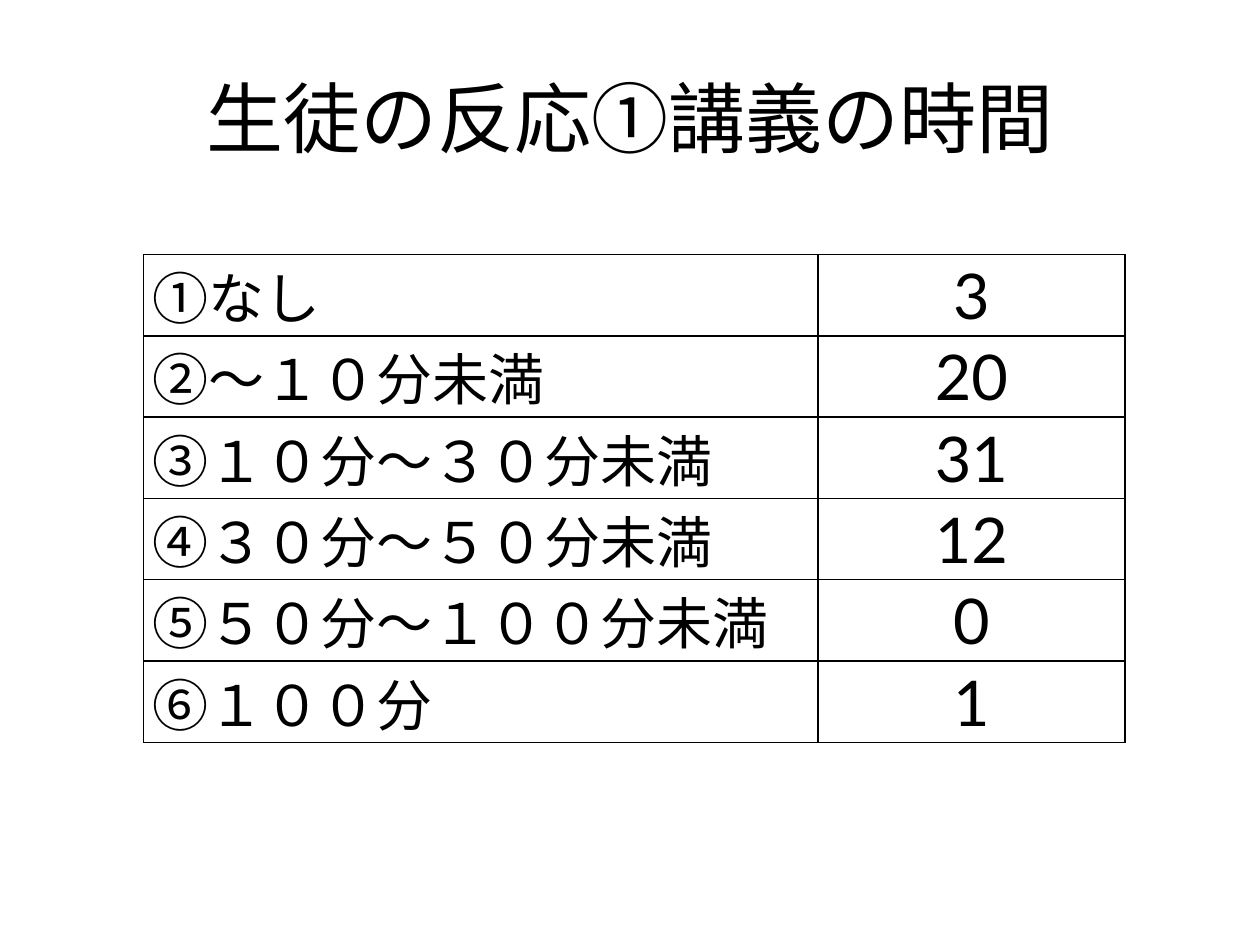
from lxml import etree
from pptx import Presentation
from pptx.dml.color import RGBColor
from pptx.enum.text import MSO_ANCHOR, PP_ALIGN
from pptx.oxml.ns import qn
from pptx.util import Inches, Pt

LEFT, CENTER = PP_ALIGN.LEFT, PP_ALIGN.CENTER
MIDDLE = MSO_ANCHOR.MIDDLE
FONT = "Lato"
BLACK = "000000"
TITLE_ONLY = 5

RESPONSES = [
    ("①なし", "3"),
    ("②〜１０分未満", "20"),
    ("③１０分〜３０分未満", "31"),
    ("④３０分〜５０分未満", "12"),
    ("⑤５０分〜１００分未満", "0"),
    ("⑥１００分", "1"),
]
COLUMN_WIDTHS = (5.35, 2.44)
ROW_HEIGHT = 0.64


def color(hex_value):
    return RGBColor.from_string(hex_value)


def write_text(frame, text, size, align):
    frame.vertical_anchor = MIDDLE
    paragraph = frame.paragraphs[0]
    paragraph.alignment = align
    run = paragraph.add_run()
    run.text = text
    run.font.size = Pt(size)
    run.font.name = FONT
    run.font.color.rgb = color(BLACK)


def add_borders(cell, hex_value, width):
    properties = cell._tc.get_or_add_tcPr()
    for position, side in enumerate(("a:lnL", "a:lnR", "a:lnT", "a:lnB")):
        line = etree.Element(qn(side), w=str(Pt(width)))
        fill = etree.SubElement(line, qn("a:solidFill"))
        etree.SubElement(fill, qn("a:srgbClr"), val=hex_value)
        properties.insert(position, line)


def format_cell(cell, text, size, align):
    cell.margin_left = cell.margin_right = Inches(0.07)
    cell.margin_top = cell.margin_bottom = 0
    cell.vertical_anchor = MIDDLE
    cell.fill.background()
    write_cell = cell.text_frame
    write_text(write_cell, text, size, align)
    add_borders(cell, BLACK, 1)


def add_title(slide, text):
    title = slide.shapes.title
    title.left, title.top = Inches(0.5), Inches(0.3)
    title.width, title.height = Inches(9), Inches(1.25)
    write_text(title.text_frame, text, 44, CENTER)


def add_response_table(slide):
    table = slide.shapes.add_table(
        len(RESPONSES), len(COLUMN_WIDTHS), Inches(1.14), Inches(2.02),
        Inches(sum(COLUMN_WIDTHS)), Inches(ROW_HEIGHT * len(RESPONSES))).table
    table.first_row = table.horz_banding = False
    for column, width in zip(table.columns, COLUMN_WIDTHS):
        column.width = Inches(width)
    for row, (lecture_time, count) in zip(table.rows, RESPONSES):
        row.height = Inches(ROW_HEIGHT)
        format_cell(row.cells[0], lecture_time, 32, LEFT)
        format_cell(row.cells[1], count, 36, CENTER)


def main():
    presentation = Presentation()
    presentation.slide_width, presentation.slide_height = Inches(10), Inches(7.5)
    slide = presentation.slides.add_slide(presentation.slide_layouts[TITLE_ONLY])

    # Heading
    add_title(slide, "生徒の反応①講義の時間")

    # Number of students for each lecture time
    add_response_table(slide)

    presentation.save("out.pptx")


if __name__ == "__main__":
    main()
